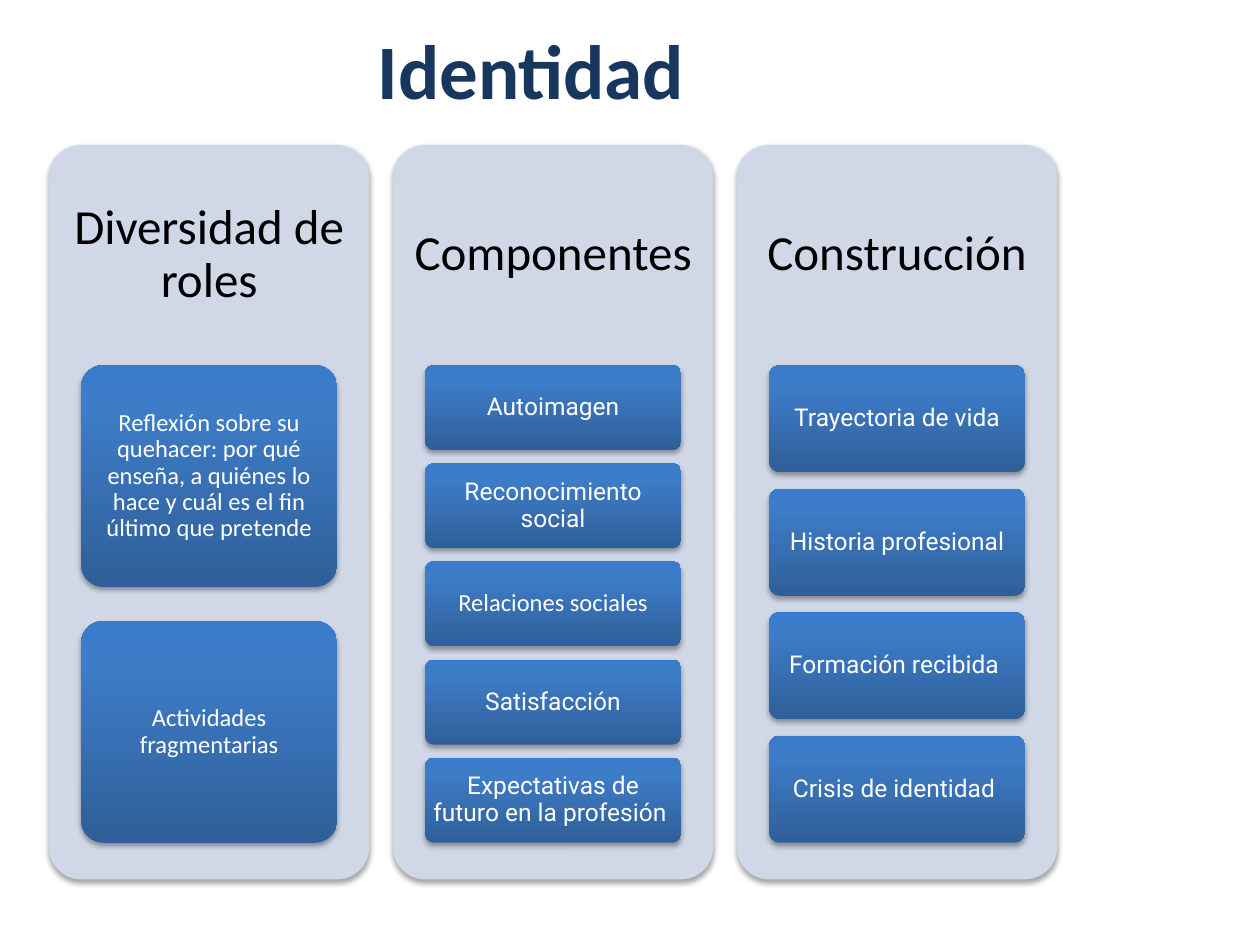
from copy import deepcopy
from lxml.etree import SubElement
from pptx import Presentation
from pptx.dml.color import RGBColor
from pptx.enum.shapes import MSO_SHAPE
from pptx.enum.text import MSO_ANCHOR, MSO_AUTO_SIZE, PP_ALIGN
from pptx.oxml.ns import qn
from pptx.util import Inches, Pt

PANEL_LEFT, PANEL_TOP = 0.39, 1.15
PANEL_WIDTH, PANEL_HEIGHT = 2.54, 5.83
PANEL_PITCH = 2.73
HEADING_SHARE, CARDS_SHARE, CARD_WIDTH_SHARE = 0.3, 0.65, 0.8
GAP_SHARE = 2 / 13
GRADIENT = [(0, "2F5F99"), (0.8, "3D7CC7"), (1, "3A7CCB")]

COLUMNS = [
    ("Diversidad de roles", [
        ("Reflexión sobre su quehacer: por qué enseña, a quiénes lo hace "
         "y cuál es el fin último que pretende", "Calibri"),
        ("Actividades fragmentarias", "Calibri"),
    ]),
    ("Componentes", [
        ("Autoimagen", "Roboto"),
        ("Reconocimiento social", "Roboto"),
        ("Relaciones sociales", "Calibri"),
        ("Satisfacción", "Roboto"),
        ("Expectativas de futuro en la profesión ", "Roboto"),
    ]),
    ("Construcción", [
        ("Trayectoria de vida", "Roboto"),
        ("Historia profesional", "Roboto"),
        ("Formación recibida ", "Roboto"),
        ("Crisis de identidad ", "Roboto"),
    ]),
]


def color(value):
    return RGBColor.from_string(value)


def set_font(font, name, size, value, bold=False):
    font.name, font.size, font.bold = name, Pt(size), bold
    font.color.rgb = color(value)


def add_shadow(shape):
    shape.shadow.inherit = False
    effects = shape._element.spPr.find(qn("a:effectLst"))
    shadow = SubElement(effects, qn("a:outerShdw"), blurRad=str(Pt(3.1)),
                        dist=str(Pt(1.8)), dir="5400000", rotWithShape="0")
    black = SubElement(shadow, qn("a:srgbClr"), val="000000")
    SubElement(black, qn("a:alpha"), val="35000")


def fill_gradient(shape):
    shape.fill.gradient()
    shape.fill.gradient_angle = 90
    stop_list = shape._element.spPr.find(".//" + qn("a:gsLst"))
    stop_list.append(deepcopy(stop_list[-1]))
    for stop, (position, value) in zip(shape.fill.gradient_stops, GRADIENT):
        stop.position = position
        stop.color.rgb = color(value)


def add_rounded(page, left, top, width, height):
    shape = page.shapes.add_shape(MSO_SHAPE.ROUNDED_RECTANGLE, Inches(left),
                                  Inches(top), Inches(width), Inches(height))
    shape.adjustments[0] = 0.1
    shape.line.fill.background()
    add_shadow(shape)
    return shape


def write_centered(box, text, font, size, value, side, end):
    frame = box.text_frame
    frame.word_wrap = True
    frame.vertical_anchor = MSO_ANCHOR.MIDDLE
    frame.margin_left = frame.margin_right = Inches(side)
    frame.margin_top = frame.margin_bottom = Inches(end)
    para = frame.paragraphs[0]
    para.text = text
    para.alignment = PP_ALIGN.CENTER
    para.line_spacing = 0.9
    set_font(para.font, font, size, value)


def add_title(page):
    box = page.shapes.add_textbox(Inches(0.12), Inches(0.13), Inches(8.27), Inches(0.84))
    frame = box.text_frame
    frame.word_wrap = True
    frame.auto_size = MSO_AUTO_SIZE.SHAPE_TO_FIT_TEXT
    para = frame.paragraphs[0]
    para.alignment = PP_ALIGN.CENTER
    for text, size, value, bold in [("Identidad", 44, "17375E", True),
                                    (" ", 25, "000000", False)]:
        span = para.add_run()
        span.text = text
        set_font(span.font, "Calibri", size, value, bold)


def add_card(page, left, top, width, height, text, font):
    card = add_rounded(page, left, top, width, height)
    fill_gradient(card)
    write_centered(card, text, font, 14, "FFFFFF", 0.04, 0.03)


def add_column(page, left, heading, cards):
    panel = add_rounded(page, left, PANEL_TOP, PANEL_WIDTH, PANEL_HEIGHT)
    panel.fill.solid()
    panel.fill.fore_color.rgb = color("D0D8E8")
    heading_height = PANEL_HEIGHT * HEADING_SHARE
    box = page.shapes.add_textbox(Inches(left), Inches(PANEL_TOP),
                                  Inches(PANEL_WIDTH), Inches(heading_height))
    write_centered(box, heading, "Calibri", 28, "000000", 0.12, 0.12)

    width = PANEL_WIDTH * CARD_WIDTH_SHARE
    card_left = left + (PANEL_WIDTH - width) / 2
    count = len(cards)
    height = PANEL_HEIGHT * CARDS_SHARE / (count + (count - 1) * GAP_SHARE)
    for row, (text, font) in enumerate(cards):
        top = PANEL_TOP + heading_height + row * height * (1 + GAP_SHARE)
        add_card(page, card_left, top, width, height, text, font)


def main():
    deck = Presentation()
    deck.slide_width, deck.slide_height = Inches(10), Inches(7.5)
    page = deck.slides.add_slide(deck.slide_layouts[6])
    add_title(page)
    for index, (heading, cards) in enumerate(COLUMNS):
        add_column(page, PANEL_LEFT + index * PANEL_PITCH, heading, cards)
    deck.save("out.pptx")


if __name__ == "__main__":
    main()
